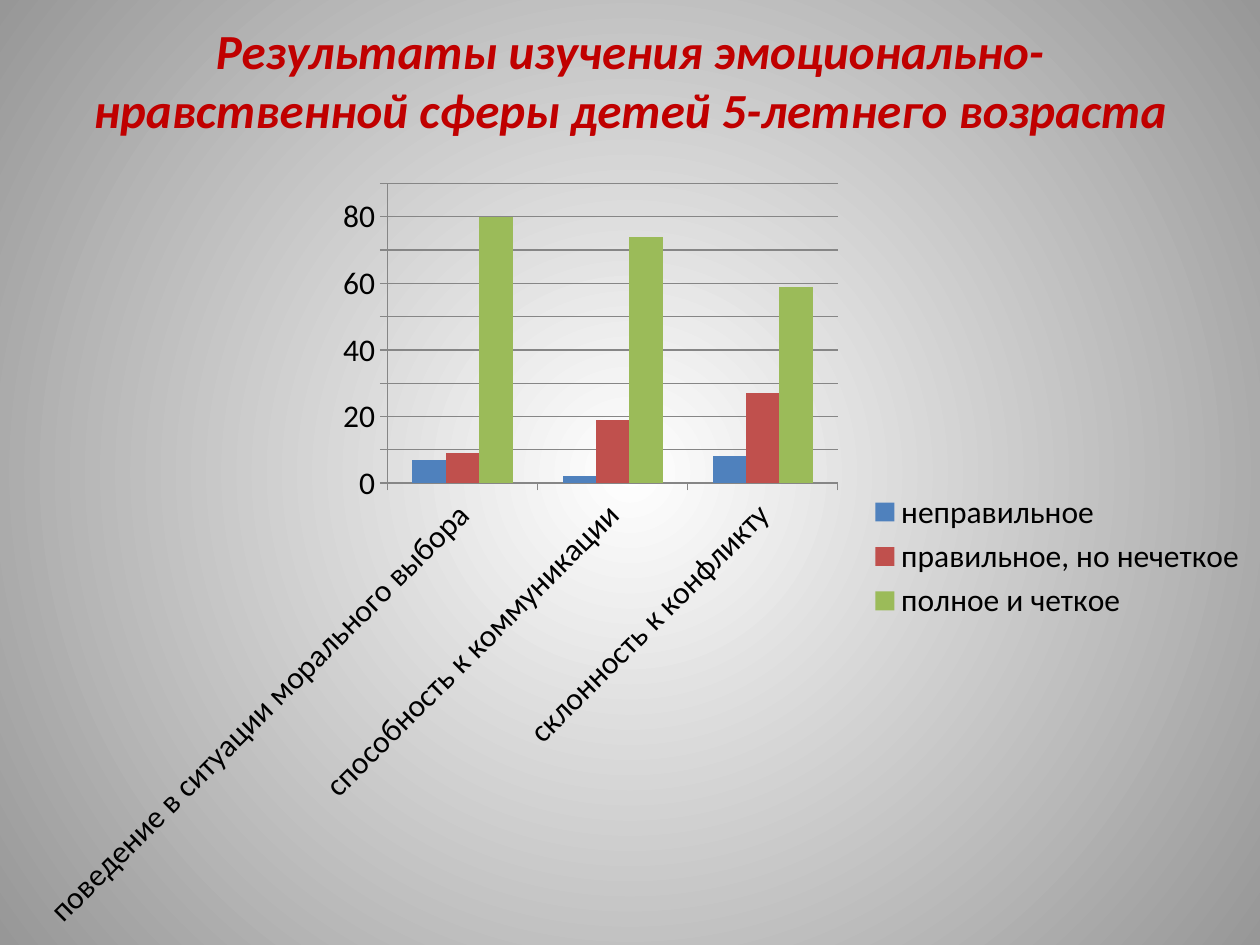
from dataclasses import dataclass

from lxml import etree
from pptx import Presentation
from pptx.chart.data import CategoryChartData
from pptx.dml.color import RGBColor
from pptx.enum.chart import XL_CHART_TYPE, XL_LEGEND_POSITION, XL_TICK_MARK
from pptx.enum.text import MSO_ANCHOR, PP_ALIGN
from pptx.oxml.ns import qn
from pptx.util import Pt

CLUSTERED = XL_CHART_TYPE.COLUMN_CLUSTERED
LEGEND_RIGHT = XL_LEGEND_POSITION.RIGHT
TICK_OUTSIDE = XL_TICK_MARK.OUTSIDE
MIDDLE = MSO_ANCHOR.MIDDLE
CENTER = PP_ALIGN.CENTER

EMU_PER_PX = 914400 // 126


@dataclass(frozen=True)
class Theme:
    font: str = "Calibri"
    title_size: int = 28
    chart_size: int = 18
    title: str = "C00000"
    text: str = "000000"
    grid: str = "868686"
    glow: str = "FFFFFF"
    edge: str = "979797"


THEME = Theme()

TITLE = "Результаты изучения эмоционально-нравственной сферы детей 5-летнего возраста"
CATEGORIES = [
    "поведение в ситуации морального выбора",
    "способность к коммуникации",
    "склонность к конфликту",
]
# Series name, values, colour
SERIES = [
    ("неправильное", (7, 2, 8), "4F81BD"),
    ("правильное, но нечеткое", (9, 19, 27), "C0504D"),
    ("полное и четкое", (80, 74, 59), "9BBB59"),
]


def px(*lengths):
    return [length * EMU_PER_PX for length in lengths]


def rgb(code):
    return RGBColor.from_string(code)


def style_font(font, size, color):
    font.name = THEME.font
    font.size = Pt(size)
    font.color.rgb = rgb(color)


def paint_background(page):
    """Radial gradient, light in the centre."""
    fill = page.background.fill
    fill.gradient()
    for stop, color in zip(fill.gradient_stops, (THEME.glow, THEME.edge)):
        stop.color.rgb = rgb(color)
    gradient = page._element.find(".//" + qn("a:gradFill"))
    gradient.remove(gradient.find(qn("a:lin")))
    circle = etree.SubElement(gradient, qn("a:path"), path="circle")
    etree.SubElement(circle, qn("a:fillToRect"),
                     l="50000", t="50000", r="50000", b="50000")


def add_title(page, text, *place):
    box = page.shapes.add_textbox(*px(*place))
    frame = box.text_frame
    frame.word_wrap = True
    frame.vertical_anchor = MIDDLE
    frame.text = text
    para = frame.paragraphs[0]
    para.alignment = CENTER
    font = para.runs[0].font
    style_font(font, THEME.title_size, THEME.title)
    font.bold = font.italic = True


def style_axis(axis):
    axis.major_tick_mark = TICK_OUTSIDE
    axis.format.line.color.rgb = rgb(THEME.grid)


def add_column_chart(page, *place):
    data = CategoryChartData()
    data.categories = CATEGORIES
    for name, values, _ in SERIES:
        data.add_series(name, values)
    chart = page.shapes.add_chart(CLUSTERED, *px(*place), data).chart
    style_font(chart.font, THEME.chart_size, THEME.text)
    chart.has_title = False

    # Columns
    plot = chart.plots[0]
    plot.vary_by_categories = False
    plot.gap_width = 150
    for series, (_, _, color) in zip(plot.series, SERIES):
        series.format.fill.solid()
        series.format.fill.fore_color.rgb = rgb(color)

    # Axes and gridlines
    style_axis(chart.category_axis)
    style_axis(chart.value_axis)
    chart.value_axis.has_major_gridlines = True
    chart.value_axis.major_gridlines.format.line.color.rgb = rgb(THEME.grid)

    # Legend
    chart.has_legend = True
    chart.legend.position = LEGEND_RIGHT
    chart.legend.include_in_layout = False


def main():
    deck = Presentation()
    deck.slide_width, deck.slide_height = px(1260, 945)
    page = deck.slides.add_slide(deck.slide_layouts[6])
    paint_background(page)
    add_title(page, TITLE, 63, 0, 1134, 158)
    add_column_chart(page, 20, 168, 1240, 777)
    deck.save("out.pptx")


if __name__ == "__main__":
    main()
